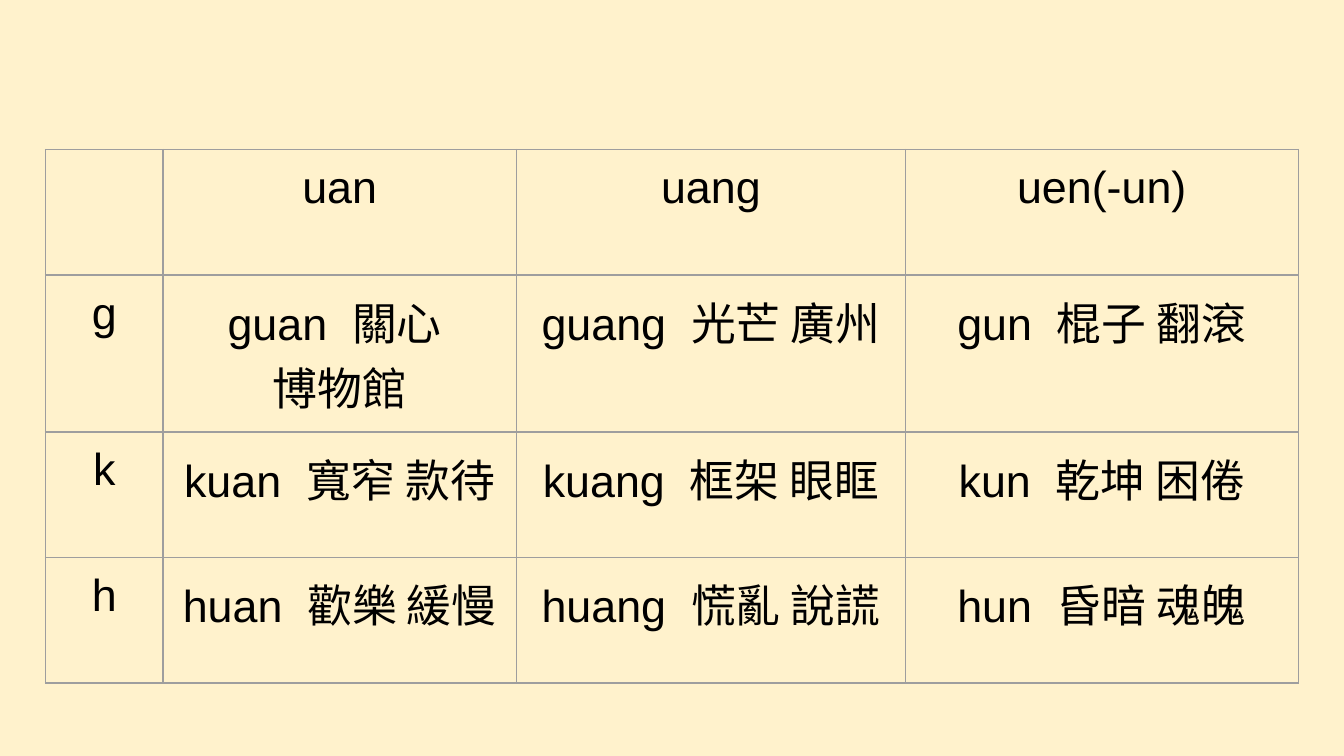
"""Build a slide with a table of pinyin syllables by initial and final."""
from dataclasses import dataclass

import pptx
import pptx.dml.color
import pptx.enum.text
import pptx.oxml
import pptx.oxml.ns
import pptx.table
import pptx.text.text
import pptx.util

Pt = pptx.util.Pt

BACKGROUND = "FFF2CC"
BORDER = "9E9E9E"
INK = "000000"
FONT_SIZE = 24
GAP_SPACING = 6.67
CELL_MARGIN = 7.2
TABLE_LEFT, TABLE_TOP = 24.4, 80.1
COLUMN_WIDTHS = (62.9, 189.4, 208.4, 210.4)
ROW_HEIGHT = 67.25


@dataclass(frozen=True)
class Entry:
    syllable: str = ""
    words: str = ""
    second_line: str = ""


ROWS = (
    (Entry(), Entry("uan"), Entry("uang"), Entry("uen(-un)")),
    (Entry("g"), Entry("guan", "關心 ", "博物館"),
     Entry("guang", "光芒 廣州"), Entry("gun", "棍子 翻滾")),
    (Entry("k"), Entry("kuan", "寬窄 款待"),
     Entry("kuang", "框架 眼眶"), Entry("kun", "乾坤 困倦")),
    (Entry("h"), Entry("huan", "歡樂 緩慢"),
     Entry("huang", "慌亂 說謊"), Entry("hun", "昏暗 魂魄")),
)


def color(value: str) -> pptx.dml.color.RGBColor:
    return pptx.dml.color.RGBColor.from_string(value)


def add_words(paragraph: pptx.text.text._Paragraph, words: str) -> None:
    gap = paragraph.add_run()
    gap.text = " "
    gap._r.get_or_add_rPr().set("spc", str(round(GAP_SPACING * 100)))
    paragraph.add_run().text = words


def add_borders(cell: pptx.table._Cell) -> None:
    properties = cell._tc.get_or_add_tcPr()
    for side in ("lnL", "lnR", "lnT", "lnB"):
        properties.append(pptx.oxml.parse_xml(
            f'<a:{side} {pptx.oxml.ns.nsdecls("a")} w="{Pt(0.75)}">'
            f'<a:solidFill><a:srgbClr val="{BORDER}"/></a:solidFill></a:{side}>'
        ))


def format_text(paragraph: pptx.text.text._Paragraph) -> None:
    paragraph.alignment = pptx.enum.text.PP_ALIGN.CENTER
    paragraph.font.size = Pt(FONT_SIZE)
    for run in paragraph.runs:
        run.font.name = "Arial"
        run.font.size = Pt(FONT_SIZE)
        run.font.color.rgb = color(INK)


def fill_cell(cell: pptx.table._Cell, entry: Entry) -> None:
    cell.margin_left = cell.margin_right = Pt(CELL_MARGIN)
    cell.margin_top = cell.margin_bottom = Pt(CELL_MARGIN)
    add_borders(cell)
    cell.fill.background()
    text_frame = cell.text_frame
    text_frame.text = entry.syllable
    if entry.words:
        add_words(text_frame.paragraphs[0], entry.words)
    if entry.second_line:
        text_frame.add_paragraph().text = entry.second_line
    for paragraph in text_frame.paragraphs:
        format_text(paragraph)


def main() -> None:
    presentation = pptx.Presentation()
    presentation.slide_width, presentation.slide_height = Pt(720), Pt(405)
    slide = presentation.slides.add_slide(presentation.slide_layouts[6])
    slide.background.fill.solid()
    slide.background.fill.fore_color.rgb = color(BACKGROUND)

    table = slide.shapes.add_table(
        len(ROWS), len(COLUMN_WIDTHS), Pt(TABLE_LEFT), Pt(TABLE_TOP),
        Pt(sum(COLUMN_WIDTHS)), Pt(ROW_HEIGHT * len(ROWS)),
    ).table
    table.first_row = table.horz_banding = False
    for column, width in zip(table.columns, COLUMN_WIDTHS):
        column.width = Pt(width)
    for row, entries in zip(table.rows, ROWS):
        row.height = Pt(ROW_HEIGHT)
        for cell, entry in zip(row.cells, entries):
            fill_cell(cell, entry)

    presentation.save("out.pptx")


if __name__ == "__main__":
    main()
